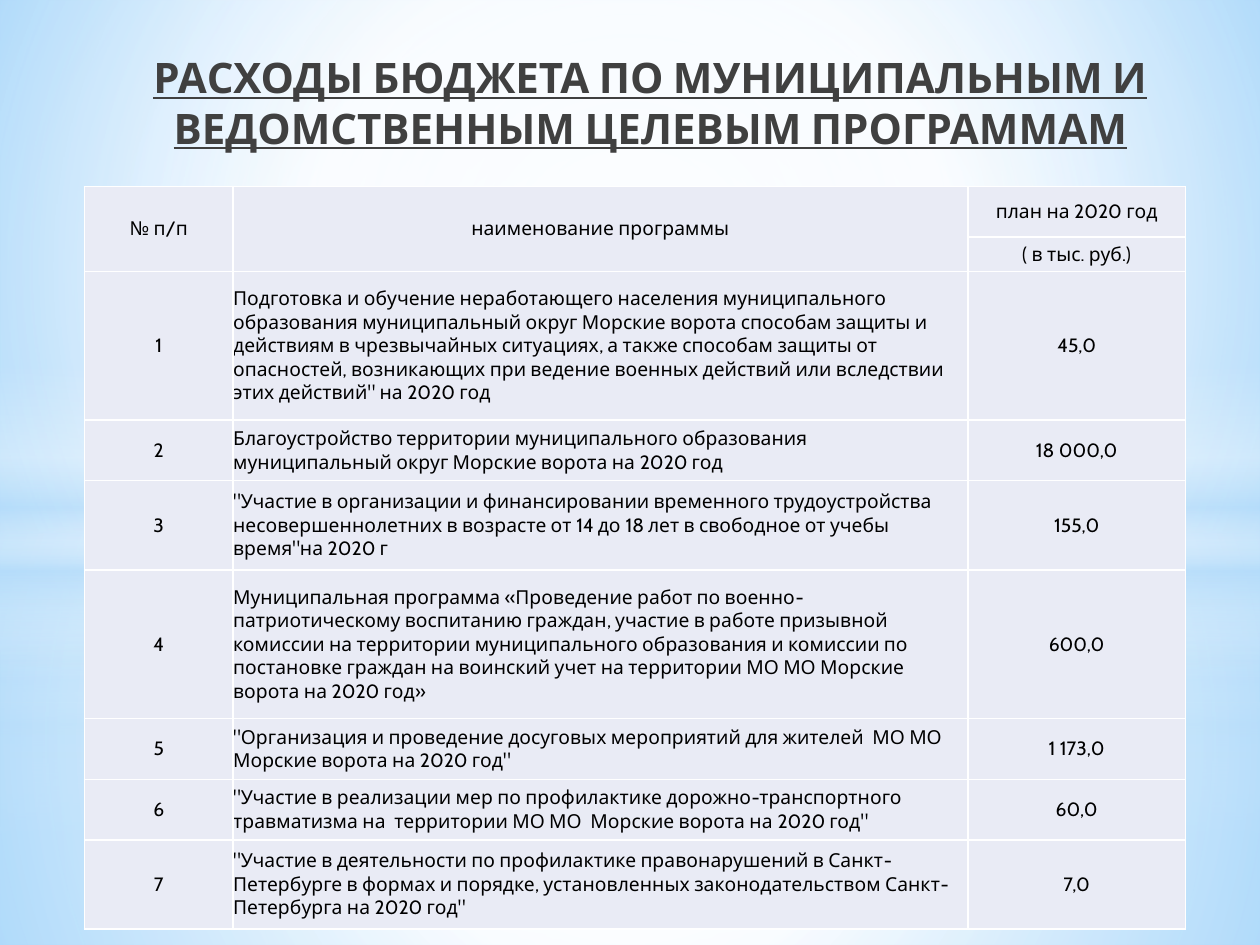
from typing import NamedTuple

from pptx import Presentation
from pptx.dml.color import RGBColor
from pptx.enum import shapes as sh, text as tx
from pptx.oxml import parse_xml
from pptx.oxml.ns import nsdecls, qn
from pptx.util import Cm, Pt

BLACK = RGBColor(0x00, 0x00, 0x00)
GREY = RGBColor(0x40, 0x40, 0x40)
WHITE = RGBColor(0xFF, 0xFF, 0xFF)
PALE = RGBColor(0xE9, 0xEB, 0xF5)
SKY = RGBColor(0xB4, 0xDC, 0xFA)
LIGHT = RGBColor(0x9E, 0xD5, 0xFF)
BLUE = RGBColor(0x5B, 0xB9, 0xFF)
FONT = "Cabin"
WIDTH, HEIGHT = 25.4, 19.05


class Stop(NamedTuple):
    pos: int
    color: RGBColor
    alpha: int = 100


class Grad(NamedTuple):
    """Colour stops; round about the focus (left, top, right, bottom), or downward."""
    stops: list[Stop]
    focus: tuple[int, ...] | None = (50, 50, 50, 50)


class Glow(NamedTuple):
    """A full-width layer of the backdrop, in centimetres."""
    kind: sh.MSO_SHAPE
    top: float
    height: float
    grad: Grad


class Row(NamedTuple):
    height: float
    name: str
    plan: str


def halo(first: int, pos: int, mid: int, last: int) -> Grad:
    return Grad([Stop(0, WHITE, first), Stop(pos, WHITE, mid), Stop(100, SKY, last)])


def fade(pos: int) -> Grad:
    return Grad([Stop(0, WHITE), Stop(pos, WHITE, 0)])


RECT, OVAL = sh.MSO_SHAPE.RECTANGLE, sh.MSO_SHAPE.OVAL
BACK = Grad([Stop(0, LIGHT), Stop(60, WHITE), Stop(100, BLUE)], (20, 10, 20, 60))
BAND = Grad([Stop(0, WHITE, 0), Stop(29, WHITE, 30), Stop(45, SKY, 40),
             Stop(55, WHITE, 26), Stop(65, SKY, 60), Stop(100, WHITE, 0)], None)
GLOWS = [
    Glow(RECT, 14.17, 4.88, halo(91, 37, 76, 79)),
    Glow(RECT, 0, 14.17, halo(89, 48, 62, 79)),
    Glow(RECT, 10.46, 6.35, BAND),
    Glow(OVAL, 4.45, 14.17, fade(56)),
    Glow(RECT, 10.74, 8.31, halo(92, 37, 77, 80)),
    Glow(RECT, 0, 10.74, halo(90, 48, 63, 80)),
    Glow(RECT, 7.37, 6.35, BAND),
    Glow(OVAL, 4.45, 14.17, fade(54)),
]

TITLE = "РАСХОДЫ БЮДЖЕТА ПО МУНИЦИПАЛЬНЫМ И ВЕДОМСТВЕННЫМ ЦЕЛЕВЫМ ПРОГРАММАМ"
COLS = [3.0, 14.81, 4.39]
HEADS = [
    (1.02, ("№ п/п", "наименование программы", "план на 2020 год")),
    (0.69, ("", "", "( в тыс. руб.)")),
]
ROWS = [
    Row(3.0, "Подготовка и обучение неработающего населения муниципального образования "
        "муниципальный округ Морские ворота способам защиты и действиям в чрезвычайных "
        "ситуациях, а также способам защиты от опасностей, возникающих при ведение "
        'военных действий или вследствии этих действий" на 2020 год', "45,0"),
    Row(1.22, "Благоустройство территории муниципального образования муниципальный "
        "округ Морские ворота на 2020 год", "18 000,0"),
    Row(1.8, '"Участие в организации и финансировании временного трудоустройства '
        "несовершеннолетних в возрасте от 14 до 18 лет в свободное от учебы "
        'время"на 2020 г', "155,0"),
    Row(3.0, "Муниципальная программа «Проведение работ по военно-патриотическому "
        "воспитанию граждан, участие в работе призывной комиссии на территории "
        "муниципального образования и комиссии по постановке граждан на воинский учет "
        "на территории МО МО Морские ворота на 2020 год»", "600,0"),
    Row(1.22, '"Организация и проведение досуговых мероприятий для жителей  МО МО '
        'Морские ворота на 2020 год"', "1 173,0"),
    Row(1.22, '"Участие в реализации мер по профилактике дорожно-транспортного '
        'травматизма на  территории МО МО  Морские ворота на 2020 год"', "60,0"),
    Row(1.8, '"Участие в деятельности по профилактике правонарушений в '
        "Санкт-Петербурге в формах и порядке, установленных законодательством "
        'Санкт-Петербурга на 2020 год"', "7,0"),
]


def paint(fill, root, grad: Grad) -> None:
    """Give the fill under root a gradient with alpha and focus."""
    fill.gradient()
    old = next(root.iter(qn("a:gradFill")))
    stops = "".join(
        f'<a:gs pos="{s.pos * 1000}"><a:srgbClr val="{s.color}">'
        f'<a:alpha val="{s.alpha * 1000}"/></a:srgbClr></a:gs>' for s in grad.stops)
    if grad.focus:
        sides = " ".join(f'{k}="{v * 1000}"' for k, v in zip("ltrb", grad.focus))
        way = f'<a:path path="circle"><a:fillToRect {sides}/></a:path>'
    else:
        way = '<a:lin ang="5400000" scaled="0"/>'
    new = parse_xml(f'<a:gradFill {nsdecls("a")} rotWithShape="1">'
                    f"<a:gsLst>{stops}</a:gsLst>{way}</a:gradFill>")
    old.getparent().replace(old, new)


def add_glow(slide, glow: Glow) -> None:
    shape = slide.shapes.add_shape(glow.kind, 0, Cm(glow.top), Cm(WIDTH), Cm(glow.height))
    shape.shadow.inherit = False
    shape.line.fill.background()
    paint(shape.fill, shape._element, glow.grad)


def set_title(slide) -> None:
    title = slide.shapes.title
    title.left, title.top, title.width, title.height = Cm(0.86), Cm(0.6), Cm(24.5), Cm(2.6)
    frame = title.text_frame
    frame.text = TITLE
    frame.word_wrap = True
    frame.auto_size = tx.MSO_AUTO_SIZE.NONE
    frame.vertical_anchor = tx.MSO_ANCHOR.BOTTOM
    para = frame.paragraphs[0]
    para.alignment = tx.PP_ALIGN.CENTER
    font = para.font
    font.name, font.size, font.bold, font.underline = FONT, Pt(24), True, True
    font.color.rgb = GREY
    slide.shapes._spTree.append(title._element)


def set_cell(cell, words: str, align: tx.PP_ALIGN) -> None:
    cell.text = words
    cell.vertical_anchor = tx.MSO_ANCHOR.MIDDLE
    cell.margin_left = cell.margin_right = cell.margin_top = cell.margin_bottom = 0
    para = cell.text_frame.paragraphs[0]
    para.alignment = align
    para.font.name, para.font.size = FONT, Pt(11)
    para.font.color.rgb = BLACK
    cell.fill.solid()
    cell.fill.fore_color.rgb = PALE
    props = cell._tc.get_or_add_tcPr()
    for i, side in enumerate("LRTB"):
        props.insert(i, parse_xml(
            f'<a:ln{side} {nsdecls("a")} w="{Pt(1)}"><a:solidFill>'
            f'<a:srgbClr val="{WHITE}"/></a:solidFill></a:ln{side}>'))


def add_plan(slide) -> None:
    """Add the table of programmes and planned sums."""
    lines = HEADS + [(r.height, (str(i), r.name, r.plan)) for i, r in enumerate(ROWS, 1)]
    high = sum(h for h, _ in lines)
    table = slide.shapes.add_table(len(lines), len(COLS), Cm(1.7), Cm(3.76),
                                   Cm(sum(COLS)), Cm(high)).table
    for col, width in zip(table.columns, COLS):
        col.width = Cm(width)
    for r, (height, words) in enumerate(lines):
        table.rows[r].height = Cm(height)
        for c, word in enumerate(words):
            left = c == 1 and r >= len(HEADS)
            set_cell(table.cell(r, c), word,
                     tx.PP_ALIGN.LEFT if left else tx.PP_ALIGN.CENTER)
    for c in (0, 1):
        table.cell(0, c).merge(table.cell(1, c))


def main() -> None:
    deck = Presentation()
    deck.slide_width, deck.slide_height = Cm(WIDTH), Cm(HEIGHT)
    slide = deck.slides.add_slide(deck.slide_layouts[5])
    paint(slide.background.fill, slide._element, BACK)
    for glow in GLOWS:
        add_glow(slide, glow)
    set_title(slide)
    add_plan(slide)
    deck.save("out.pptx")


if __name__ == "__main__":
    main()
